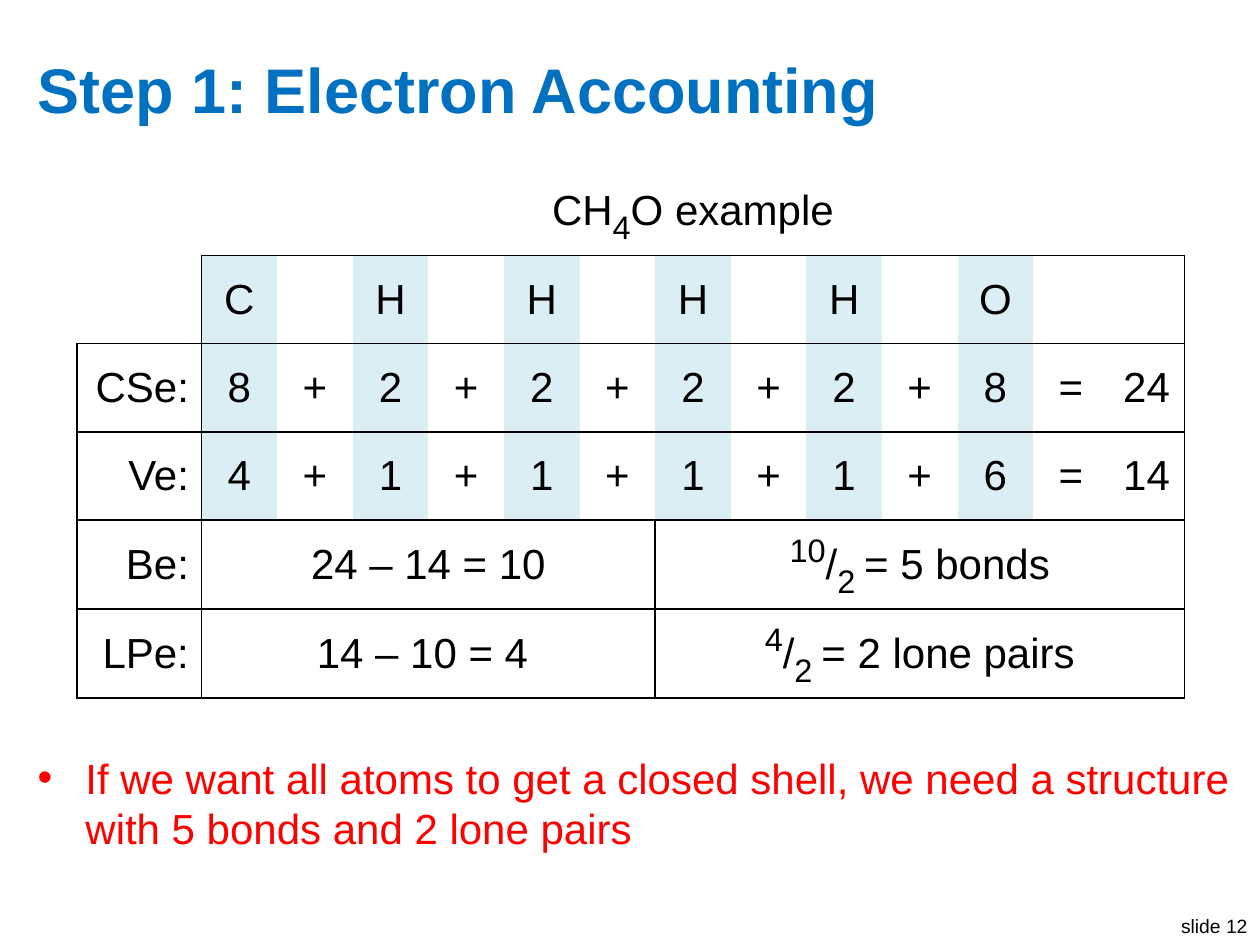
import pptx
import pptx.util
import pptx.dml.color
import pptx.enum.text
import pptx.oxml.ns
import lxml.etree

COLORS = {"title": "0070C0", "text": "000000", "note": "FF0000", "atom": "DBEEF4", "plain": "FFFFFF"}
ALIGN = pptx.enum.text.PP_ALIGN
MIDDLE = pptx.enum.text.MSO_ANCHOR.MIDDLE
TOP = pptx.enum.text.MSO_ANCHOR.TOP
WIDTH, HEIGHT = 10, 7.5
LABEL_WIDTH, TERM_WIDTH, ROW_HEIGHT = 0.99, 0.6, 0.7
TERMS, HALF = 13, 6
SUBSCRIPT, SUPERSCRIPT = -25, 30


def inches(value):
    return pptx.util.Inches(value)


def rgb(name):
    return pptx.dml.color.RGBColor.from_string(COLORS[name])


def add_xml(parent, tag, **attributes):
    return lxml.etree.SubElement(parent, pptx.oxml.ns.qn(tag), attributes)


class SlideBuilder:
    font = "Arial"
    size = 24

    def __init__(self, deck):
        self.page = deck.slides.add_slide(deck.slide_layouts[6])

    def add_spans(self, para, pieces, size=None, color="text", bold=False, align=ALIGN.LEFT):
        para.alignment = align
        for text, baseline in pieces:
            span = para.add_run()
            span.text = text
            span.font.name = self.font
            span.font.size = pptx.util.Pt(32 if baseline else size or self.size)
            span.font.bold = bold
            span.font.color.rgb = rgb(color)
            if baseline:
                span.font._element.set("baseline", str(baseline * 1000))

    def text(self, left, top, width, height, words, anchor=TOP, wrap=True, **style):
        box = self.page.shapes.add_textbox(*map(inches, (left, top, width, height)))
        box.text_frame.word_wrap = wrap
        box.text_frame.vertical_anchor = anchor
        para = box.text_frame.paragraphs[0]
        self.add_spans(para, [(words, 0)], **style)
        return para

    def bullet(self, *place, indent=0.38, **style):
        para = self.text(*place, **style)
        para.space_before = pptx.util.Pt(12)
        properties = para._p.get_or_add_pPr()
        properties.set("marL", str(inches(indent)))
        properties.set("indent", str(-inches(indent)))
        add_xml(properties, "a:buFont", typeface=self.font)
        add_xml(properties, "a:buChar", char="•")

    def borders(self, cell, sides):
        properties = cell._tc.get_or_add_tcPr()
        for side in "LRTB":
            line = add_xml(properties, "a:ln" + side, w=str(pptx.util.Pt(1)))
            if side in sides:
                add_xml(add_xml(line, "a:solidFill"), "a:srgbClr", val=COLORS["text"])
            else:
                add_xml(line, "a:noFill")

    def cell(self, cell, pieces, sides, fill, align):
        self.borders(cell, sides)
        cell.fill.solid()
        cell.fill.fore_color.rgb = rgb(fill)
        cell.vertical_anchor = MIDDLE
        self.add_spans(cell.text_frame.paragraphs[0], pieces, align=align)

    def table(self, left, top, rows):
        width = LABEL_WIDTH + TERMS * TERM_WIDTH
        frame = self.page.shapes.add_table(
            len(rows), TERMS + 1, *map(inches, (left, top, width, len(rows) * ROW_HEIGHT)))
        grid = frame.table
        grid.first_row = grid.horz_banding = False
        for number, column in enumerate(grid.columns):
            column.width = inches(TERM_WIDTH if number else LABEL_WIDTH)
        for number, entries in enumerate(rows):
            first = 0
            for pieces, span in entries:
                last = first + span - 1
                cell = grid.cell(number, first)
                if span > 1:
                    cell.merge(grid.cell(number, last))
                is_atom = 1 <= number <= 3 and first % 2 == 1 and first < TERMS
                self.cell(cell, pieces, self.sides(number, first, last),
                          "atom" if is_atom else "plain", ALIGN.CENTER if first else ALIGN.RIGHT)
                first = last + 1

    def sides(self, number, first, last):
        if number == 0:
            return "B" if first else ""
        if first == 0:
            return "RB" if number == 1 else "LRTB"
        left = "L" if first == 1 or last > first else ""
        right = "R" if last == TERMS or last > first else ""
        return left + right + "TB"


def plain(text):
    return [(text, 0)] if text else []


def term_row(label, terms):
    return [(plain(text), 1) for text in [label] + terms]


def sum_row(label, values, total):
    terms = " + ".join(values).split(" ")
    return term_row(label, terms + ["=", total])


def result_row(label, difference, numerator, result):
    fraction = [(numerator, SUPERSCRIPT), ("/", 0), ("2 ", SUBSCRIPT), (result, 0)]
    return [(plain(label), 1), (plain(difference), HALF), (fraction, TERMS - HALF)]


def main():
    deck = pptx.Presentation()
    deck.slide_width, deck.slide_height = inches(WIDTH), inches(HEIGHT)
    slide = SlideBuilder(deck)
    slide.text(9.25, 7.21, 0.75, 0.29, "slide 12", wrap=False, size=11, align=ALIGN.RIGHT)
    slide.text(0.2, 0.3, 9.6, 0.8, "Step 1: Electron Accounting",
               anchor=MIDDLE, size=36, color="title", bold=True)
    slide.bullet(0.2, 5.92, 9.73, 1.01,
                 "If we want all atoms to get a closed shell, we need a structure "
                 "with 5 bonds and 2 lone pairs", color="note")
    heading = [("CH", 0), ("4", SUBSCRIPT), ("O example", 0)]
    atoms = [symbol for atom in "CHHHHO" for symbol in (atom, "")]
    slide.table(0.61, 1.32, [
        [([], 1), (heading, TERMS)],
        term_row("", atoms + [""]),
        sum_row("CSe:", "822228", "24"),
        sum_row("Ve:", "411116", "14"),
        result_row("Be:", "24 – 14 = 10", "10", "= 5 bonds"),
        result_row("LPe:", "14 – 10 = 4 ", "4", "= 2 lone pairs"),
    ])
    deck.save("out.pptx")


if __name__ == "__main__":
    main()
